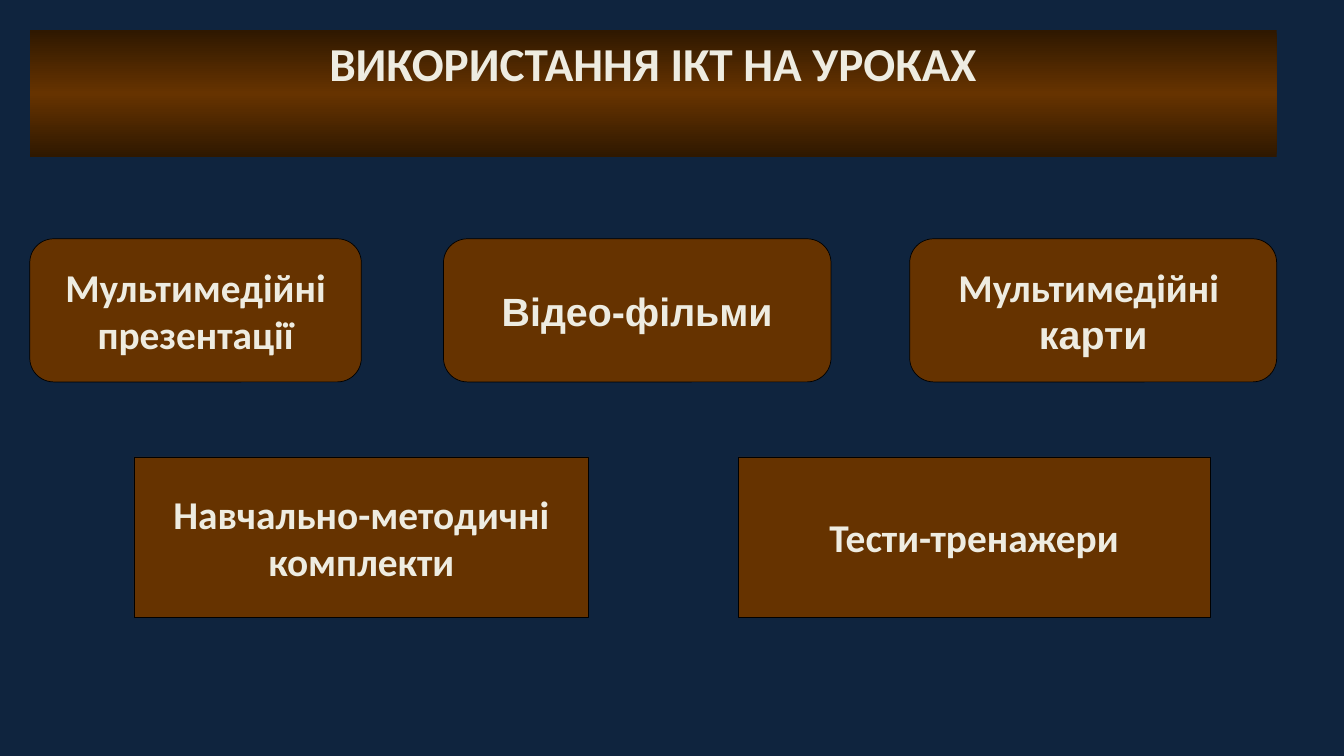
from copy import deepcopy
from dataclasses import dataclass

from pptx import Presentation
from pptx.dml.color import RGBColor
from pptx.enum.shapes import MSO_SHAPE
from pptx.enum.text import MSO_ANCHOR, PP_ALIGN
from pptx.oxml.ns import qn
from pptx.util import Inches, Pt

RECT = MSO_SHAPE.RECTANGLE
ROUND = MSO_SHAPE.ROUNDED_RECTANGLE
TOP = MSO_ANCHOR.TOP
MIDDLE = MSO_ANCHOR.MIDDLE
CENTER = PP_ALIGN.CENTER


@dataclass(frozen=True)
class Theme:
    back: RGBColor = RGBColor.from_string("0F243E")
    brown: RGBColor = RGBColor.from_string("663300")
    dark: RGBColor = RGBColor.from_string("2F1800")
    edge: RGBColor = RGBColor.from_string("000000")
    text: RGBColor = RGBColor.from_string("EEECE1")
    main: str = "Calibri"
    other: str = "Arial"
    title: int = 48
    body: int = 40
    line: float = 0.75


THEME = Theme()
SIZE = (18.97, 10.67)
TITLE = [("ВИКОРИСТАННЯ ІКТ НА УРОКАХ", THEME.main)]
BANNER = (0.42, 0.43, 17.6, 1.78)

ROWS = [
    (ROUND, 3.37, 2.02, [
        (0.42, 4.68, [("Мультимедійні", THEME.main), ("презентації", THEME.main)]),
        (6.26, 5.47, [("Відео-фільми", THEME.other)]),
        (12.84, 5.18, [("Мультимедійні ", THEME.main), ("карти", THEME.other)]),
    ]),
    (RECT, 6.45, 2.26, [
        (1.89, 6.42, [("Навчально-методичні", THEME.main), ("комплекти", THEME.main)]),
        (10.42, 6.66, [("Тести-тренажери", THEME.main)]),
    ]),
]


def add_box(slide, kind, place, lines, size, anchor, wrap):
    box = slide.shapes.add_shape(kind, *map(Inches, place))
    box.shadow.inherit = False
    frame = box.text_frame
    frame.word_wrap = wrap
    frame.vertical_anchor = anchor
    for i, (words, face) in enumerate(lines):
        para = frame.add_paragraph() if i else frame.paragraphs[0]
        para.text = words
        para.alignment = CENTER
        font = para.font
        font.name = face
        font.size = Pt(size)
        font.bold = True
        font.color.rgb = THEME.text
    return box


def add_title(slide):
    box = add_box(slide, RECT, BANNER, TITLE, THEME.title, TOP, True)
    box.line.fill.background()
    box.fill.gradient()
    box.fill.gradient_angle = 90
    stops = box._element.spPr.find(qn("a:gradFill")).find(qn("a:gsLst"))
    stops.insert(1, deepcopy(stops[0]))
    shades = (THEME.dark, THEME.brown, THEME.dark)
    for i, (stop, shade) in enumerate(zip(box.fill.gradient_stops, shades)):
        stop.position = i / 2
        stop.color.rgb = shade


def add_card(slide, kind, place, lines):
    box = add_box(slide, kind, place, lines, THEME.body, MIDDLE, False)
    box.fill.solid()
    box.fill.fore_color.rgb = THEME.brown
    box.line.color.rgb = THEME.edge
    box.line.width = Pt(THEME.line)


def main():
    deck = Presentation()
    deck.slide_width, deck.slide_height = map(Inches, SIZE)
    slide = deck.slides.add_slide(deck.slide_layouts[6])
    slide.background.fill.solid()
    slide.background.fill.fore_color.rgb = THEME.back
    add_title(slide)
    for kind, top, height, cards in ROWS:
        for left, width, lines in cards:
            add_card(slide, kind, (left, top, width, height), lines)
    deck.save("out.pptx")


if __name__ == "__main__":
    main()
